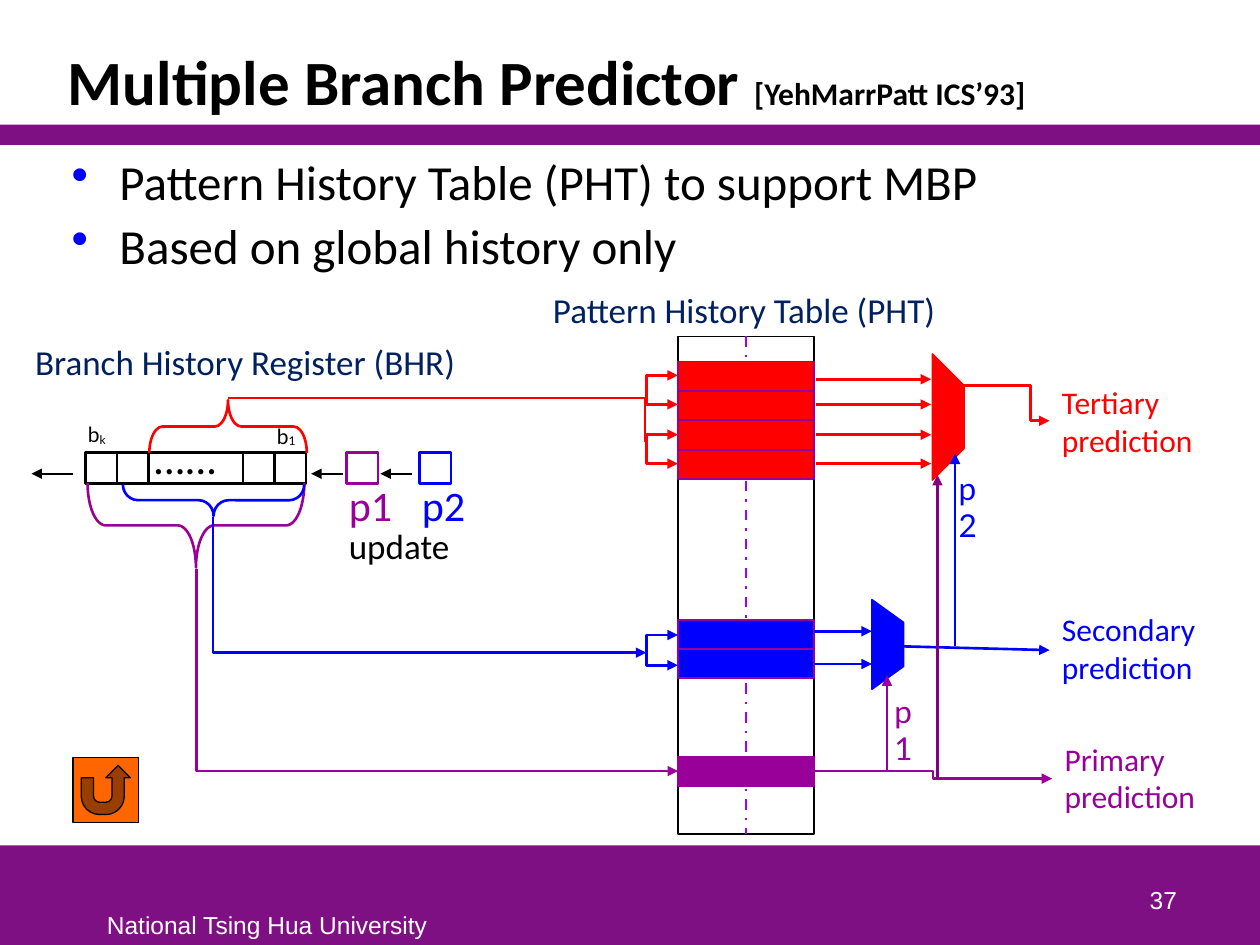
from lxml import etree
from pptx import Presentation
from pptx import util as u
from pptx.dml.color import RGBColor
from pptx.enum import dml, shapes, text
from pptx.oxml.ns import qn

Inches = u.Inches
COLORS = {
    "band": "7F1084", "white": "FFFFFF", "black": "000000", "navy": "002060",
    "red": "FF0000", "blue": "0000FF", "purple": "990099", "violet": "9900FF",
    "plum": "800080", "orange": "FF6600",
}


def rgb(name):
    return RGBColor.from_string(COLORS[name])


class Diagram:
    """Draws styled elements on one slide; all lengths are in inches."""

    def __init__(self, slide, font="Calibri", width=1.5):
        self.slide = slide
        self.font = font
        self.width = width

    def style_outline(self, shape, color, width=None, head=False, tail=False):
        if color is None:
            shape.line.fill.background()
            return
        shape.line.color.rgb = rgb(color)
        shape.line.width = u.Pt(width or self.width)
        outline = shape._element.spPr.find(qn("a:ln"))
        for wanted, tag in ((head, "a:headEnd"), (tail, "a:tailEnd")):
            if wanted:
                etree.SubElement(outline, qn(tag), type="triangle")

    def style_shape(self, shape, fill, line, width=None, **ends):
        shape.shadow.inherit = False
        if fill:
            shape.fill.solid()
            shape.fill.fore_color.rgb = rgb(fill)
        else:
            shape.fill.background()
        self.style_outline(shape, line, width, **ends)
        return shape

    def preset(self, kind, box, fill=None, line=None, width=None):
        shape = self.slide.shapes.add_shape(kind, *map(Inches, box))
        return self.style_shape(shape, fill, line, width)

    def rectangle(self, box, fill=None, line=None, width=None):
        return self.preset(shapes.MSO_SHAPE.RECTANGLE, box, fill, line, width)

    def brace(self, box, color, curve, rotation):
        shape = self.preset(shapes.MSO_SHAPE.RIGHT_BRACE, box, line=color)
        shape.rotation = rotation
        shape.adjustments[0] = curve

    def outline(self, points, closed, fill=None, line=None, width=None, **ends):
        corners = [(Inches(x), Inches(y)) for x, y in points]
        builder = self.slide.shapes.build_freeform(*corners[0])
        builder.add_line_segments(corners[1:], close=closed)
        return self.style_shape(builder.convert_to_shape(), fill, line, width, **ends)

    def multiplexer(self, left, top, height, slant, color, width=0.25):
        right, bottom = left + width, top + height
        points = [(left, bottom), (right, bottom - slant), (right, top + slant), (left, top)]
        self.outline(points, True, color, color, 1)

    def fork(self, top, bottom, color, left=5.13, right=5.38):
        """Bracket with an arrow into each of two table rows."""
        points = [(right, bottom), (left, bottom), (left, top), (right, top)]
        self.outline(points, False, line=color, head=True, tail=True)

    def connector(self, start, end, color, width=None, arrow=True,
                  kind=shapes.MSO_CONNECTOR.STRAIGHT):
        line = self.slide.shapes.add_connector(kind, *map(Inches, (*start, *end)))
        self.style_outline(line, color, width, tail=arrow)
        etree.SubElement(line._element.spPr, qn("a:effectLst"))
        return line

    def down_then_right(self, start, end, color):
        """One-bend connector, stored as a quarter turn about its centre."""
        (x1, y1), (x2, y2) = start, end
        middle_x, middle_y = (x1 + x2) / 2, (y1 + y2) / 2
        half_width, half_height = (y2 - y1) / 2, (x2 - x1) / 2
        line = self.connector((middle_x - half_width, middle_y - half_height),
                              (middle_x + half_width, middle_y + half_height),
                              color, kind=shapes.MSO_CONNECTOR.ELBOW)
        properties = line._element.spPr
        properties.find(qn("a:prstGeom")).set("prst", "bentConnector2")
        frame = properties.find(qn("a:xfrm"))
        frame.set("rot", "16200000")
        frame.set("flipH", "1")

    def label(self, box, content, size, color="black", font=None, wrap=True, anchor=None):
        shape = self.slide.shapes.add_textbox(*map(Inches, box))
        frame = shape.text_frame
        frame.word_wrap = wrap
        frame.vertical_anchor = anchor or text.MSO_ANCHOR.TOP
        frame.text = content
        for paragraph in frame.paragraphs:
            for run in paragraph.runs:
                self.style_run(run, size, color, font)
        return frame

    def style_run(self, run, size, color="black", font=None):
        run.font.size = u.Pt(size)
        run.font.name = font or self.font
        run.font.color.rgb = rgb(color)

    def bit_label(self, box, subscript):
        paragraph = self.label(box, "b", 12, font="Lato", wrap=False).paragraphs[0]
        run = paragraph.add_run()
        run.text = subscript
        self.style_run(run, 12, font="Lato")
        run.font._element.set("baseline", "-8000")

    def bullets(self, box, items, size):
        frame = self.label(box, "\n".join(items), size)
        for index, paragraph in enumerate(frame.paragraphs):
            properties = paragraph._p.get_or_add_pPr()
            properties.set("marL", str(Inches(0.38)))
            properties.set("indent", str(-Inches(0.38)))
            bullet_color = etree.SubElement(properties, qn("a:buClr"))
            etree.SubElement(bullet_color, qn("a:srgbClr"), val=COLORS["blue"])
            etree.SubElement(properties, qn("a:buChar"), char="•")
            paragraph.space_before = u.Pt(3 if index else 0)


def draw_frame(diagram):
    diagram.rectangle((0, 6.71, 10, 0.79), "band")
    diagram.rectangle((0, 0.99, 10, 0.16), "band")
    diagram.label((0.75, 7.17, 2.76, 0.33), "National Tsing Hua University", 14, "white",
                  "Arial", wrap=False)
    number = diagram.label((7.36, 6.81, 2.08, 0.5), "37", 14, "white", "Arial",
                           anchor=text.MSO_ANCHOR.BOTTOM)
    number.paragraphs[0].alignment = text.PP_ALIGN.RIGHT
    title = diagram.label((0.44, 0.25, 8.97, 0.74), "Multiple Branch Predictor ", 36,
                          anchor=text.MSO_ANCHOR.BOTTOM).paragraphs[0]
    title.line_spacing = 0.85
    citation = title.add_run()
    citation.text = "[YehMarrPatt ICS’93]"
    diagram.style_run(citation, 18)
    for run in title.runs:
        run.font.bold = True
    diagram.bullets((0.47, 1.15, 8.94, 1.1), [
        "Pattern History Table (PHT) to support MBP", "Based on global history only"], 28)


def draw_history_register(diagram):
    diagram.label((0.18, 2.65, 3.77, 0.44), "Branch History Register (BHR)", 20, "navy")
    diagram.bit_label((0.6, 3.3, 0.37, 0.3), "k")
    left = 0.68
    for width in (0.25, 0.25, 0.75, 0.25, 0.25):
        diagram.rectangle((left, 3.59, width, 0.25), "white", "black")
        left += width
    diagram.label((1.12, 3.38, 0.98, 0.5), "……", 24, font="Lato")
    diagram.bit_label((2.1, 3.31, 0.37, 0.3), "1")
    diagram.brace((1.22, 3.31, 0.67, 1.72), "purple", 0.215, 90)
    diagram.brace((1.57, 3.25, 0.25, 1.44), "blue", 0.48, 90)
    diagram.brace((1.6, 2.76, 0.42, 1.25), "red", 0.25, 270)
    for name, left, color in (("p1", 2.75, "purple"), ("p2", 3.33, "blue")):
        diagram.rectangle((left, 3.59, 0.25, 0.25), "white", color)
        diagram.label((left - 0.08, 3.76, 0.55, 0.5), name, 24, color, wrap=False)
    diagram.label((2.67, 4.11, 1.01, 0.44), "update", 20, wrap=False)
    for start, end in ((3.27, 3.02), (2.72, 2.47), (0.58, 0.25)):
        diagram.connector((start, 3.76), (end, 3.76), "black", 1)


def draw_pattern_table(diagram):
    diagram.label((4.29, 2.24, 3.5, 0.44), "Pattern History Table (PHT)", 20, "navy")
    table = diagram.rectangle((5.38, 2.67, 1.08, 3.95), line="black", width=1)
    axis = diagram.connector((5.92, 2.67), (5.92, 6.62), "violet", arrow=False)
    axis.line.dash_style = dml.MSO_LINE.DASH_DOT
    axis.begin_connect(table, 0)
    axis.end_connect(table, 2)
    for color, top, count in (("red", 2.87, 4), ("blue", 4.92, 2), ("purple", 6.01, 1)):
        for row in range(count):
            diagram.rectangle((5.38, top + row * 0.234, 1.08, 0.23), color, "purple", 1)


def draw_paths(diagram):
    diagram.down_then_right((1.56, 4.52), (5.38, 6.12), "purple")
    diagram.down_then_right((1.69, 4.1), (5.13, 5.18), "blue")
    diagram.connector((1.81, 3.16), (5.12, 3.16), "red", arrow=False)
    diagram.connector((5.12, 3.17), (5.12, 3.51), "red", arrow=False)
    for top, bottom, color in ((5.04, 5.28, "blue"), (2.98, 3.21, "red"), (3.45, 3.68, "red")):
        diagram.fork(top, bottom, color)
    diagram.multiplexer(6.92, 4.76, 0.71, 0.18, "blue")
    diagram.multiplexer(7.4, 2.81, 1, 0.25, "red")
    for y in (5.01, 5.27):
        diagram.connector((6.46, y), (6.92, y), "blue")
    for y in (3.01, 3.21, 3.45, 3.68):
        diagram.connector((6.48, y), (7.39, y), "red")
    diagram.connector((6.46, 6.12), (8.35, 6.18), "purple", kind=shapes.MSO_CONNECTOR.ELBOW)
    diagram.connector((7.17, 5.13), (8.33, 5.16), "blue")
    diagram.outline([(7.65, 3.06), (8.18, 3.06), (8.18, 3.34), (8.33, 3.34)], False,
                    line="red", tail=True)
    for x, bottom, top, color in ((7.04, 6.11, 5.36, "purple"), (7.58, 5.13, 3.6, "blue"),
                                  (7.44, 6.19, 3.77, "plum")):
        diagram.connector((x, bottom), (x, top), color)
    for name, left, top, color in (("p1", 7, 5.44, "purple"), ("p2", 7.51, 3.67, "blue")):
        diagram.label((left, top, 0.44, 0.68), name, 18, color, "Lato")
    for order, left, top, color in (("Tertiary", 8.33, 2.99, "red"),
                                    ("Secondary", 8.33, 4.79, "blue"),
                                    ("Primary", 8.35, 5.82, "purple")):
        diagram.label((left, top, 1.48, 0.71), f"{order} prediction", 18, color)


def main():
    presentation = Presentation()
    presentation.slide_width, presentation.slide_height = Inches(10), Inches(7.5)
    diagram = Diagram(presentation.slides.add_slide(presentation.slide_layouts[6]))
    draw_frame(diagram)
    draw_history_register(diagram)
    draw_pattern_table(diagram)
    draw_paths(diagram)
    diagram.preset(shapes.MSO_SHAPE.ACTION_BUTTON_RETURN, (0.58, 6.01, 0.52, 0.52),
                   "orange", "black", 0.75)
    presentation.save("out.pptx")


if __name__ == "__main__":
    main()
